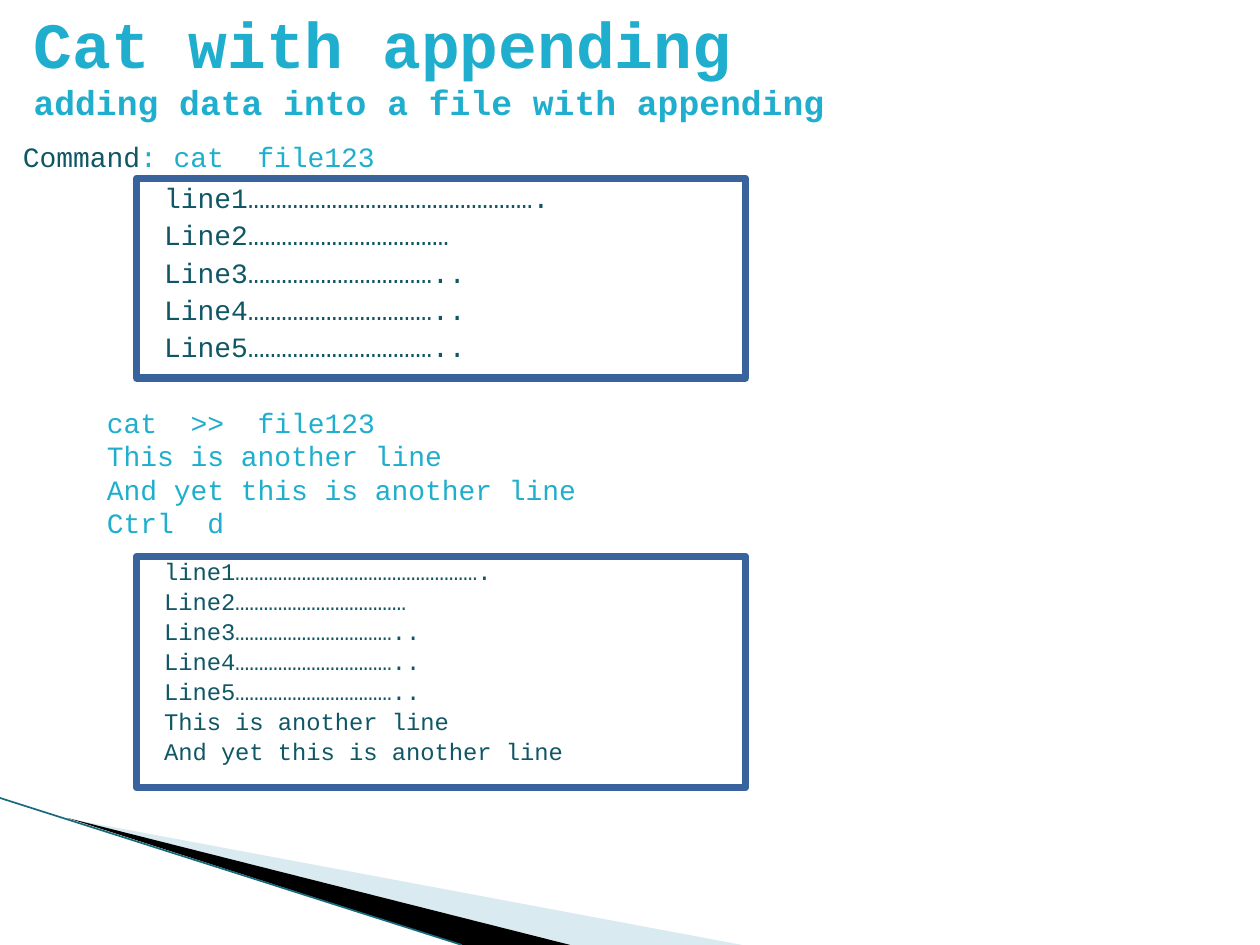
from lxml.etree import SubElement
from pptx import Presentation
from pptx.dml.color import RGBColor
from pptx.enum.shapes import MSO_CONNECTOR, MSO_SHAPE
from pptx.enum.text import MSO_ANCHOR, PP_ALIGN
from pptx.oxml.ns import qn
from pptx.util import Inches, Pt

COLORS = {
    "accent": "1FAECD",
    "dark": "105766",
    "border": "39639D",
    "paper": "FFFFFF",
    "wedge": "A0CBDC",
    "shade": "000000",
    "edge": "17697C",
}
FONT = "Courier New"
CELLS_PER_INCH = 12
SIDES = ("left", "top", "width", "height")
FILE_LINES = [
    "line1…………………………………………….",
    "Line2………………………………",
    "Line3……………………………..",
    "Line4……………………………..",
    "Line5……………………………..",
]
ADDED_LINES = ["This is another line", "And yet this is another line"]


def cells(*values):
    return [Inches(v / CELLS_PER_INCH) for v in values]


def rgb(name):
    return RGBColor.from_string(COLORS[name])


def apply(target, values):
    for name, value in values.items():
        setattr(target, name, value)


def add_run(p, text, size, color, bold=False):
    r = p.add_run()
    r.text = text
    apply(r.font, {"name": FONT, "size": Pt(size), "bold": bold})
    r.font.color.rgb = rgb(color)


def set_frame(sp, box):
    left, top, width, height = cells(*box)
    dx, dy = sp.left - left, sp.top - top
    path = next(sp._element.iter(qn("a:path")))
    for pt in path.iter(qn("a:pt")):
        pt.set("x", str(int(pt.get("x")) + dx))
        pt.set("y", str(int(pt.get("y")) + dy))
    path.set("w", str(width))
    path.set("h", str(height))
    apply(sp, dict(zip(SIDES, (left, top, width, height))))


def add_wedge(slide, box, points, color, alpha=None):
    start, *rest = [cells(*point) for point in points]
    builder = slide.shapes.build_freeform(*start)
    builder.add_line_segments(rest, close=True)
    sp = builder.convert_to_shape()
    set_frame(sp, box)
    sp.shadow.inherit = False
    sp.fill.solid()
    sp.fill.fore_color.rgb = rgb(color)
    sp.line.fill.background()
    if alpha:
        clr = sp.fill._xPr.find(qn("a:solidFill"))[0]
        SubElement(clr, qn("a:alpha")).set("val", str(alpha * 1000))


def add_edge(slide, ends):
    line = slide.shapes.add_connector(MSO_CONNECTOR.STRAIGHT, *cells(*ends))
    line.line.color.rgb = rgb("edge")
    line.line.width = Pt(0.95)
    SubElement(line._element.spPr, qn("a:effectLst"))


def add_title(slide, box, heading, subheading):
    sp = slide.shapes.title
    apply(sp, dict(zip(SIDES, cells(*box))))
    tf = sp.text_frame
    apply(tf, {"word_wrap": True, "vertical_anchor": MSO_ANCHOR.MIDDLE})
    p = tf.paragraphs[0]
    p.alignment = PP_ALIGN.LEFT
    add_run(p, heading, 36.9, "accent", True)
    p.add_line_break()
    add_run(p, subheading, 19.8, "accent", True)


def add_text(slide, box, lines):
    tf = slide.shapes.add_textbox(*cells(*box)).text_frame
    tf.word_wrap = True
    for i, runs in enumerate(lines):
        p = tf.add_paragraph() if i else tf.paragraphs[0]
        for text, color in runs:
            add_run(p, text, 16, color)


def add_file_box(slide, box, lines, size, spacing):
    sp = slide.shapes.add_shape(MSO_SHAPE.RECTANGLE, *cells(*box))
    sp.shadow.inherit = False
    sp.fill.solid()
    sp.fill.fore_color.rgb = rgb("paper")
    sp.line.color.rgb = rgb("border")
    sp.line.width = Pt(4.33)
    tf = sp.text_frame
    apply(tf, {"word_wrap": True, "vertical_anchor": MSO_ANCHOR.TOP})
    for i, text in enumerate(lines):
        p = tf.add_paragraph() if i else tf.paragraphs[0]
        apply(p, {"alignment": PP_ALIGN.LEFT, "line_spacing": spacing,
                  "space_before": Pt(4 if i else 0)})
        pPr = p._p.get_or_add_pPr()
        pPr.set("marL", str(Inches(0.4)))
        pPr.set("indent", str(Inches(-0.28)))
        add_run(p, text, size, "dark")


def main():
    prs = Presentation()
    apply(prs, {"slide_width": Inches(10), "slide_height": Inches(7.5)})
    slide = prs.slides.add_slide(prs.slide_layouts[5])

    add_wedge(slide, (9.4, 65.6, 50, 19),
              [(6.6, 78), (70.7, 90), (54.3, 90)], "wedge", 40)
    add_wedge(slide, (-0.7, 76, 50, 11),
              [(6.4, 77.9), (54.3, 90), (44, 90)], "shade")
    add_edge(slide, (0, 76, 44, 90))

    add_title(slide, (2, 0, 108, 12), "Cat with appending",
              "adding data into a file with appending")
    add_text(slide, (1, 12.7, 119, 7.7),
             [[("Command", "dark"), (": cat  file123", "accent")]])
    add_file_box(slide, (13, 17, 58, 19), FILE_LINES, 16, 0.9)
    add_file_box(slide, (13, 53, 58, 22), FILE_LINES + ADDED_LINES, 13.6, 0.8)
    session = ["cat  >>  file123", *ADDED_LINES, "Ctrl  d"]
    add_text(slide, (9, 38, 51, 14.2), [[(text, "accent")] for text in session])

    prs.save("out.pptx")


if __name__ == "__main__":
    main()
